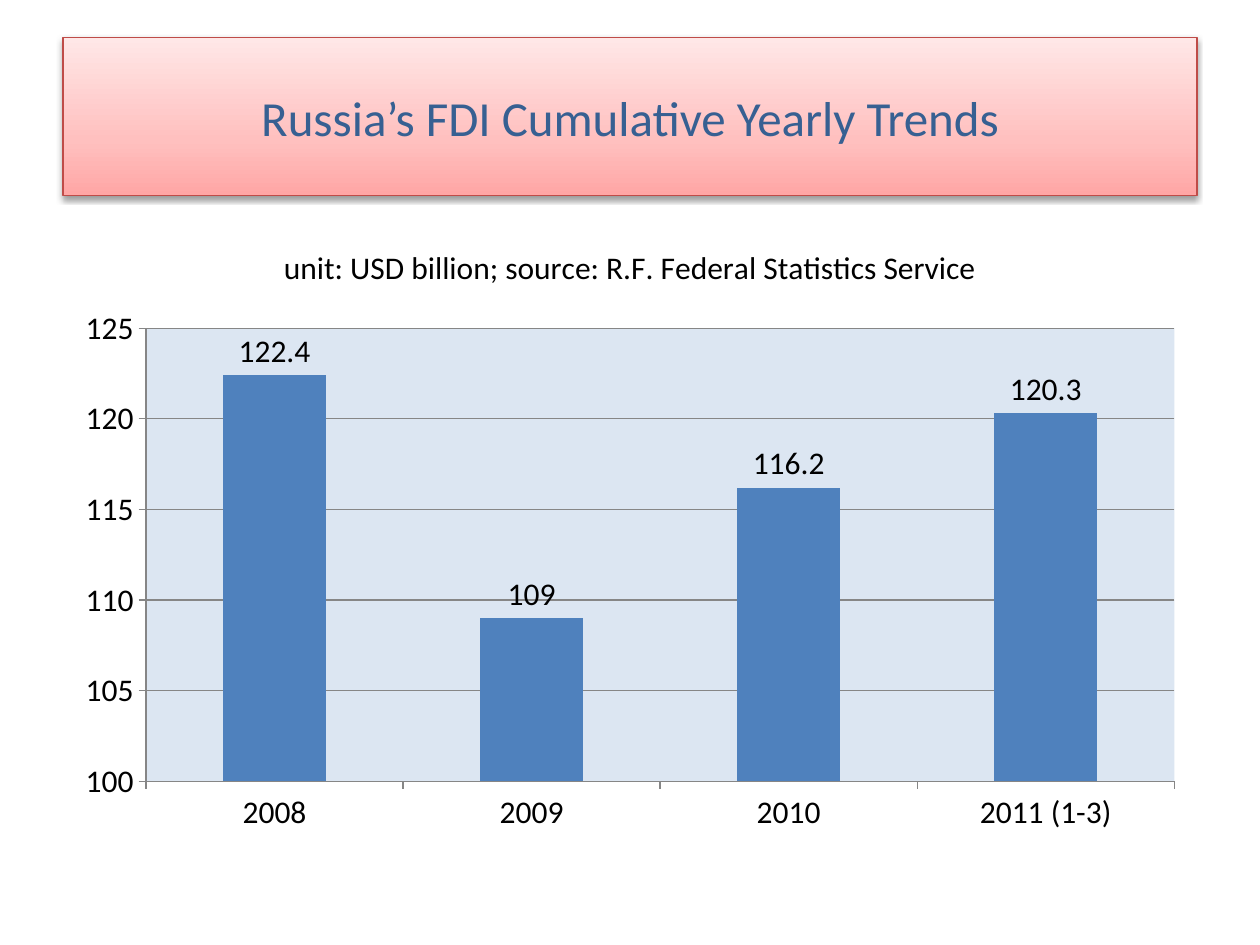
from pptx import Presentation, util as u
from pptx.chart import data
from pptx.dml.color import RGBColor
from pptx.enum import chart as ch, shapes, text
from pptx.oxml import parse_xml
from pptx.oxml.ns import nsdecls

EMU_PER_PX = 9144
BLACK = RGBColor(0x00, 0x00, 0x00)
NAVY = RGBColor(0x37, 0x60, 0x92)
BLUE = RGBColor(0x4F, 0x81, 0xBD)
PALE_BLUE = RGBColor(0xDC, 0xE6, 0xF2)
GREY = RGBColor(0x86, 0x86, 0x86)
RED = RGBColor(0xBF, 0x4C, 0x48)
ROSE = RGBColor(0xFF, 0xA6, 0xA5)
LIGHT_ROSE = RGBColor(0xFF, 0xC0, 0xBF)
PALE_ROSE = RGBColor(0xFF, 0xE7, 0xE7)


def px(length):
    return u.Emu(length * EMU_PER_PX)


class SlideBuilder:
    font = "Calibri"

    def __init__(self, slide):
        self.slide = slide

    def style_font(self, font, size, color):
        font.name = self.font
        font.size = u.Pt(size)
        font.bold = False
        font.color.rgb = color

    def fill_gradient(self, box, stops, angle):
        marks = "".join(
            f'<a:gs pos="{percent * 1000}"><a:srgbClr val="{color}"/></a:gs>'
            for percent, color in stops
        )
        gradient = parse_xml(
            f'<a:gradFill {nsdecls("a")} rotWithShape="1"><a:gsLst>{marks}</a:gsLst>'
            f'<a:lin ang="{angle * 60000}" scaled="0"/></a:gradFill>'
        )
        box.line._get_or_add_ln().addprevious(gradient)

    def add_shadow(self, box):
        box.shadow.inherit = False
        effects = box._element.spPr.find("{*}effectLst")
        effects.append(parse_xml(
            f'<a:outerShdw {nsdecls("a")} blurRad="{u.Pt(3.1)}" dist="{u.Pt(1.6)}" '
            'dir="5400000" rotWithShape="0"><a:srgbClr val="000000">'
            '<a:alpha val="38000"/></a:srgbClr></a:outerShdw>'
        ))

    def banner(self, left, top, width, height, words):
        box = self.slide.shapes.add_shape(
            shapes.MSO_SHAPE.RECTANGLE, px(left), px(top), px(width), px(height)
        )
        box.line.color.rgb = RED
        box.line.width = u.Pt(0.75)
        self.fill_gradient(box, [(0, ROSE), (35, LIGHT_ROSE), (100, PALE_ROSE)], 270)
        self.add_shadow(box)
        frame = box.text_frame
        frame.word_wrap = True
        frame.vertical_anchor = text.MSO_ANCHOR.MIDDLE
        para = frame.paragraphs[0]
        para.alignment = text.PP_ALIGN.CENTER
        span = para.add_run()
        span.text = words
        self.style_font(span.font, 28, NAVY)

    def column_chart(self, left, top, width, height, title, name, values):
        table = data.CategoryChartData()
        table.categories = list(values)
        table.add_series(name, list(values.values()))
        chart = self.slide.shapes.add_chart(
            ch.XL_CHART_TYPE.COLUMN_CLUSTERED,
            px(left), px(top), px(width), px(height), table,
        ).chart
        self.style_font(chart.font, 18, BLACK)
        chart.has_legend = False
        chart.has_title = True
        span = chart.chart_title.text_frame.paragraphs[0].add_run()
        span.text = title
        self.style_font(span.font, 18, BLACK)
        chart.chart_title.include_in_layout = False

        for axis in (chart.category_axis, chart.value_axis):
            axis.major_tick_mark = ch.XL_TICK_MARK.OUTSIDE
            axis.minor_tick_mark = ch.XL_TICK_MARK.NONE
            axis.format.line.color.rgb = GREY
        scale = chart.value_axis
        scale.minimum_scale, scale.maximum_scale, scale.major_unit = 100, 125, 5
        scale.has_major_gridlines = True
        scale.major_gridlines.format.line.color.rgb = GREY

        plot = chart.plots[0]
        plot.gap_width = 150
        plot.vary_by_categories = False
        plot.has_data_labels = True
        labels = plot.data_labels
        labels.show_value = True
        labels.position = ch.XL_LABEL_POSITION.OUTSIDE_END
        self.style_font(labels.font, 18, BLACK)
        fill = plot.series[0].format.fill
        fill.solid()
        fill.fore_color.rgb = BLUE
        chart._chartSpace.chart.plotArea.append(parse_xml(
            f'<c:spPr {nsdecls("c", "a")}><a:solidFill>'
            f'<a:srgbClr val="{PALE_BLUE}"/></a:solidFill></c:spPr>'
        ))


def main():
    deck = Presentation()
    deck.slide_width, deck.slide_height = px(1000), px(750)
    page = SlideBuilder(deck.slides.add_slide(deck.slide_layouts[6]))
    page.banner(50, 30, 900, 125, "Russia’s FDI Cumulative Yearly Trends")
    page.column_chart(
        50, 175, 900, 495,
        "unit: USD billion; source: R.F. Federal Statistics Service",
        "Series 1",
        {"2008": 122.4, "2009": 109, "2010": 116.2, "2011 (1-3)": 120.3},
    )
    deck.save("out.pptx")


if __name__ == "__main__":
    main()
